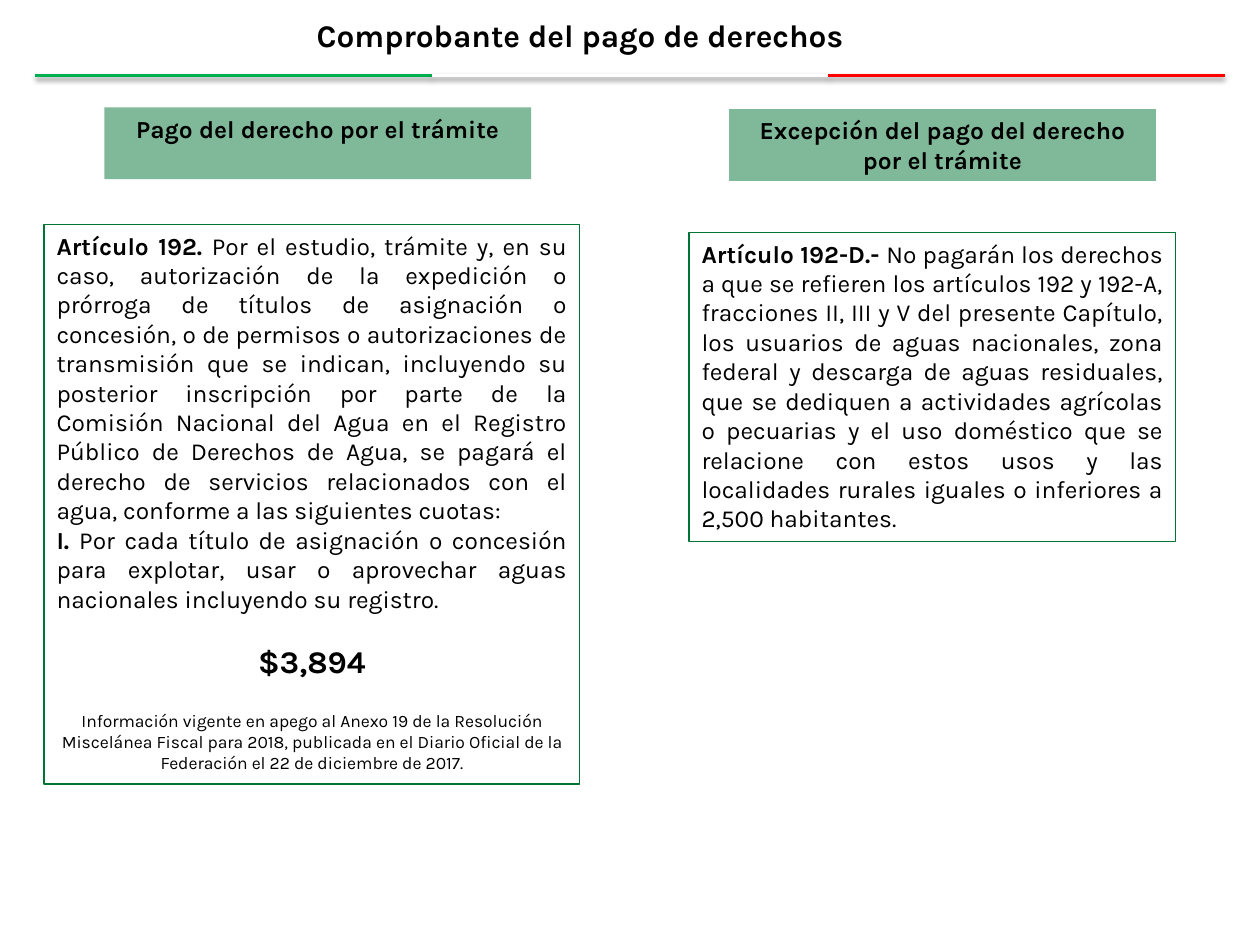
from lxml.etree import SubElement
from pptx import Presentation
from pptx.dml.color import RGBColor
from pptx.enum.shapes import MSO_CONNECTOR, MSO_SHAPE
from pptx.enum.text import MSO_ANCHOR, PP_ALIGN
from pptx.oxml.ns import qn
from pptx.util import Pt

FONT = "Karla"
GREEN = "007434"
CENTER, JUSTIFY = PP_ALIGN.CENTER, PP_ALIGN.JUSTIFY

FLAG_COLORS = ["00B050", "FFFFFF", "FF0000"]
FLAG_LEFT, FLAG_TOP, FLAG_WIDTH = 20.2, 43.2, 679.6

# A paragraph is (alignment, size, space before, [(text, bold), ...]).
TITLE = [(CENTER, 18, 0, [("Comprobante del pago de derechos", True)])]

# (left, top, width, height), paragraphs
HEADINGS = [
    ((59.6, 61.4, 244, 41),
     [(CENTER, 14, 0, [("Pago del derecho por el trámite", True)])]),
    ((416.6, 62.4, 244, 41),
     [(CENTER, 14, 0, [("Excepción del pago del derecho por el trámite", True)])]),
]
ARTICLES = [
    ((25.2, 128.2, 306, 319.8), [
        (JUSTIFY, 14, 0, [
            ("Artículo 192. ", True),
            ("Por el estudio, trámite y, en su caso, autorización de la expedición o "
             "prórroga de títulos de asignación o concesión, o de permisos o "
             "autorizaciones de transmisión que se indican, incluyendo su posterior "
             "inscripción por parte de la Comisión Nacional del Agua en el Registro "
             "Público de Derechos de Agua, se pagará el derecho de servicios "
             "relacionados con el agua, conforme a las siguientes cuotas:", False)]),
        (JUSTIFY, 14, 0, [
            ("I. ", True),
            ("Por cada título de asignación o concesión para explotar, usar o "
             "aprovechar aguas nacionales incluyendo su registro.", False)]),
        (CENTER, 18, 16.8, [("$3,894", True)]),
        (CENTER, 10, 16.8, [
            ("Información vigente en apego al Anexo 19 de la Resolución Miscelánea "
             "Fiscal para 2018, publicada en el Diario Oficial de la Federación el "
             "22 de diciembre de 2017.", False)]),
    ]),
    ((393.8, 132.8, 278, 176.8), [
        (JUSTIFY, 14, 0, [
            ("Artículo 192-D.- ", True),
            ("No pagarán los derechos a que se refieren los artículos 192 y 192-A, "
             "fracciones II, III y V del presente Capítulo, los usuarios de aguas "
             "nacionales, zona federal y descarga de aguas residuales, que se dediquen "
             "a actividades agrícolas o pecuarias y el uso doméstico que se relacione "
             "con estos usos y las localidades rurales iguales o inferiores a 2,500 "
             "habitantes.", False)]),
    ]),
]


def color(value):
    return RGBColor.from_string(value)


def write(box, paragraphs, anchor=MSO_ANCHOR.TOP):
    frame = box.text_frame
    frame.word_wrap = True
    frame.vertical_anchor = anchor
    for index, (alignment, size, space, spans) in enumerate(paragraphs):
        para = frame.add_paragraph() if index else frame.paragraphs[0]
        para.alignment = alignment
        para.space_before = Pt(space)
        for text, bold in spans:
            span = para.add_run()
            span.text = text
            span.font.name = FONT
            span.font.size = Pt(size)
            span.font.bold = bold
            span.font.color.rgb = color("000000")


def add_rectangle(page, place, paragraphs):
    box = page.shapes.add_shape(MSO_SHAPE.RECTANGLE, *map(Pt, place))
    box.shadow.inherit = False
    write(box, paragraphs)
    return box


def add_flag_line(page):
    third = FLAG_WIDTH / len(FLAG_COLORS)
    for index, value in enumerate(FLAG_COLORS):
        left = FLAG_LEFT + index * third
        line = page.shapes.add_connector(
            MSO_CONNECTOR.STRAIGHT, Pt(left), Pt(FLAG_TOP), Pt(left + third), Pt(FLAG_TOP))
        line.line.color.rgb = color(value)
        line.line.width = Pt(2)
        effects = SubElement(line._element.spPr, qn("a:effectLst"))
        shadow = SubElement(effects, qn("a:outerShdw"), blurRad=str(Pt(3.1)),
                            dist=str(Pt(1.6)), dir="5400000", rotWithShape="0")
        tint = SubElement(shadow, qn("a:srgbClr"), val="000000")
        SubElement(tint, qn("a:alpha"), val="38000")


def main():
    deck = Presentation()
    deck.slide_width, deck.slide_height = Pt(720), Pt(540)
    page = deck.slides.add_slide(deck.slide_layouts[6])

    add_flag_line(page)
    title = page.shapes.add_textbox(Pt(137.5), Pt(0), Pt(388), Pt(39.6))
    write(title, TITLE, MSO_ANCHOR.MIDDLE)

    for place, paragraphs in ARTICLES:
        box = add_rectangle(page, place, paragraphs)
        box.fill.background()
        box.line.color.rgb = color(GREEN)
        box.line.width = Pt(0.75)

    for place, paragraphs in HEADINGS:
        box = add_rectangle(page, place, paragraphs)
        box.fill.solid()
        box.fill.fore_color.rgb = color(GREEN)
        tint = box._element.spPr.find(qn("a:solidFill")).find(qn("a:srgbClr"))
        SubElement(tint, qn("a:alpha"), val="50000")
        box.line.fill.background()

    deck.save("out.pptx")


if __name__ == "__main__":
    main()
